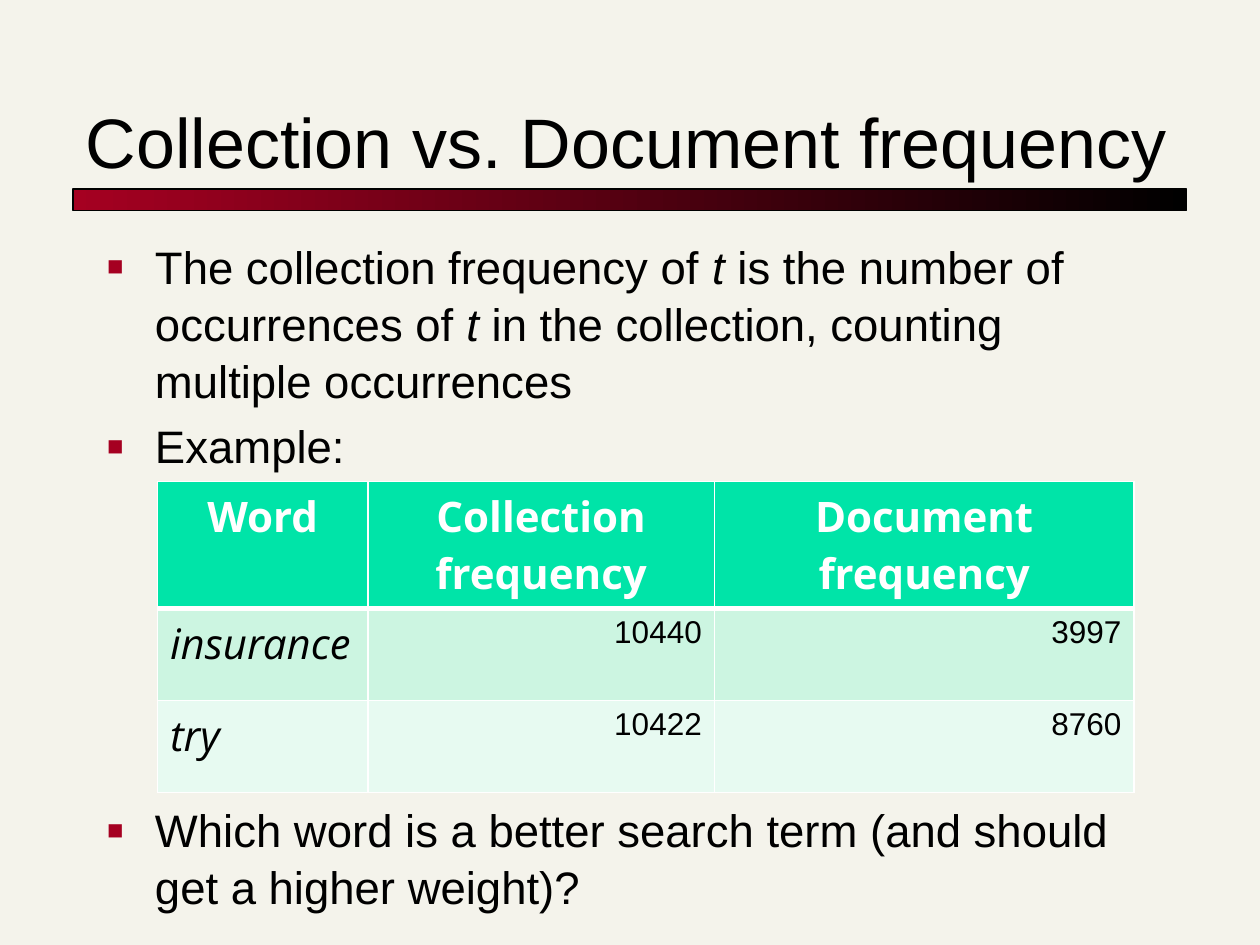
"""Build the slide comparing collection and document frequency."""
from lxml import etree
from pptx import Presentation
from pptx import util as u
from pptx.dml.color import RGBColor
from pptx.enum import shapes, text
from pptx.oxml import parse_xml
from pptx.oxml.ns import nsdecls, qn

BLACK = RGBColor(0, 0, 0)
WHITE = RGBColor(255, 255, 255)
CREAM = RGBColor(0xF4, 0xF3, 0xEB)
CRIMSON = RGBColor(0xA5, 0x00, 0x21)
HEADER_GREEN = RGBColor(0x00, 0xE4, 0xA8)
ROW_GREENS = [RGBColor(0xCC, 0xF5, 0xE1), RGBColor(0xE7, 0xFA, 0xF1)]

TITLE = "Collection vs. Document frequency"
TERM = "t"
BULLETS = [
    (["The collection frequency of ", TERM, " is the number of occurrences of ", TERM,
      " in the collection, counting multiple occurrences"], 5.2),
    (["Example:"], 5.2),
    (["Which word is a better search term (and should get a higher weight)?"], 187),
]
TABLE = [
    ("Word", "Collection frequency", "Document frequency"),
    ("insurance", "10440", "3997"),
    ("try", "10422", "8760"),
]
COLUMN_WIDTHS = [1.67, 2.75, 3.33]
ROW_HEIGHTS = [0.98, 0.73, 0.73]


def place(shape, left, top, width, height):
    shape.left, shape.top, shape.width, shape.height = map(u.Inches, (left, top, width, height))


def style(font, name, size, color, bold=False, italic=None):
    font.name, font.size, font.bold, font.italic = name, u.Pt(size), bold, italic
    font.color.rgb = color


def add_title(slide):
    title = slide.shapes.title
    place(title, 0.58, 0.42, 8.83, 1.08)
    frame = title.text_frame
    frame.text = TITLE
    frame.word_wrap = True
    frame.auto_size = text.MSO_AUTO_SIZE.NONE
    frame.vertical_anchor = text.MSO_ANCHOR.BOTTOM
    frame.paragraphs[0].alignment = text.PP_ALIGN.LEFT
    style(frame.paragraphs[0].font, "Arial", 40, BLACK)


def add_bar(slide):
    box = [u.Inches(length) for length in (0.58, 1.5, 8.84, 0.17)]
    bar = slide.shapes.add_shape(shapes.MSO_SHAPE.RECTANGLE, *box)
    bar.shadow.inherit = False
    bar.fill.gradient()
    bar.fill.gradient_angle = 0
    for stop, color, position in zip(bar.fill.gradient_stops, (CRIMSON, BLACK), (0, 1)):
        stop.color.rgb = color
        stop.position = position
    bar.line.color.rgb = BLACK
    bar.line.width = u.Pt(0.75)


def add_bullet(paragraph):
    properties = paragraph._p.get_or_add_pPr()
    properties.set("marL", str(u.Inches(0.38)))
    properties.set("indent", str(-u.Inches(0.38)))
    for xml in (f'<a:buClr {nsdecls("a")}><a:srgbClr val="{CRIMSON}"/></a:buClr>',
                f'<a:buSzPct {nsdecls("a")} val="60000"/>',
                f'<a:buFont {nsdecls("a")} typeface="Arial"/>',
                f'<a:buChar {nsdecls("a")} char="■"/>'):
        properties.insert_element_before(parse_xml(xml), "a:tabLst", "a:defRPr", "a:extLst")


def add_body(slide):
    body = slide.placeholders[1]
    place(body, 0.75, 1.83, 8.5, 5.33)
    frame = body.text_frame
    frame.word_wrap = True
    frame.auto_size = text.MSO_AUTO_SIZE.NONE
    for index, (parts, gap) in enumerate(BULLETS):
        paragraph = frame.add_paragraph() if index else frame.paragraphs[0]
        paragraph.space_before = u.Pt(gap)
        paragraph.line_spacing = 1.04
        style(paragraph.font, "Arial", 26, BLACK)
        add_bullet(paragraph)
        for part in parts:
            run = paragraph.add_run()
            run.text = part
            if part == TERM:
                run.font.italic = True


def add_borders(cell, bottom):
    properties = cell._tc.get_or_add_tcPr()
    for index, (side, width) in enumerate(zip("LRTB", (1, 1, 1, bottom))):
        border = etree.Element(qn(f"a:ln{side}"), w=str(u.Pt(width)))
        fill = etree.SubElement(border, qn("a:solidFill"))
        etree.SubElement(fill, qn("a:srgbClr"), val=str(WHITE))
        properties.insert(index, border)


def add_table(slide):
    box = [u.Inches(length) for length in (1.25, 3.82, sum(COLUMN_WIDTHS), sum(ROW_HEIGHTS))]
    table = slide.shapes.add_table(len(TABLE), len(COLUMN_WIDTHS), *box).table
    for column, width in zip(table.columns, COLUMN_WIDTHS):
        column.width = u.Inches(width)
    for row_index, (row, height) in enumerate(zip(TABLE, ROW_HEIGHTS)):
        table.rows[row_index].height = u.Inches(height)
        for column_index, value in enumerate(row):
            cell = table.cell(row_index, column_index)
            cell.text = value
            paragraph = cell.text_frame.paragraphs[0]
            cell.fill.solid()
            cell.fill.fore_color.rgb = ROW_GREENS[row_index - 1] if row_index else HEADER_GREEN
            if row_index == 0:
                paragraph.alignment = text.PP_ALIGN.CENTER
                style(paragraph.font, "Open Sans", 24, WHITE, bold=True)
            elif column_index == 0:
                style(paragraph.font, "Open Sans", 24, BLACK, italic=True)
            else:
                paragraph.alignment = text.PP_ALIGN.RIGHT
                style(paragraph.font, "Arial", 18, BLACK)
            add_borders(cell, 1 if row_index else 3)


def main():
    presentation = Presentation()
    presentation.slide_width, presentation.slide_height = u.Inches(10), u.Inches(7.5)
    slide = presentation.slides.add_slide(presentation.slide_layouts[1])
    slide.background.fill.solid()
    slide.background.fill.fore_color.rgb = CREAM
    add_bar(slide)
    add_title(slide)
    add_body(slide)
    add_table(slide)
    presentation.save("out.pptx")


if __name__ == "__main__":
    main()
